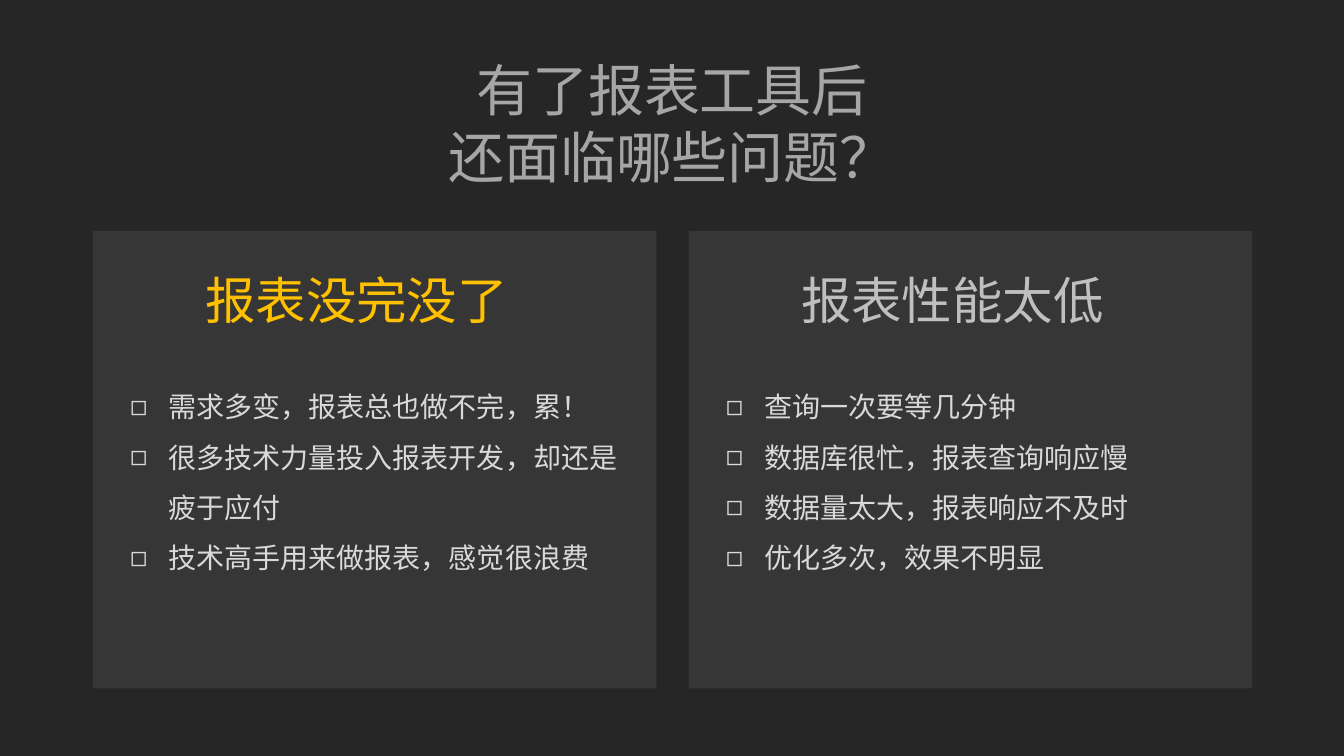
from dataclasses import dataclass

from lxml.etree import SubElement
from pptx import Presentation
from pptx.dml.color import RGBColor
from pptx.enum.shapes import MSO_SHAPE
from pptx.enum.text import MSO_ANCHOR, MSO_AUTO_SIZE, PP_ALIGN
from pptx.oxml.ns import qn
from pptx.util import Inches, Pt


@dataclass(frozen=True)
class Theme:
    background: str = "262626"
    card: str = "363636"
    title: str = "A6A6A6"
    accent: str = "FFC000"
    muted: str = "BFBFBF"
    body: str = "D9D9D9"
    title_size: int = 40
    heading_size: int = 36
    body_size: int = 20
    cjk_font: str = "Noto Sans CJK SC"
    body_font: str = "Arial"


@dataclass(frozen=True)
class Grid:
    left: float = 0.92
    top: float = 2.29
    width: float = 5.59
    height: float = 4.54
    gutter: float = 0.32

    def column(self, number):
        return self.left + number * (self.width + self.gutter)


class ComparisonPage:
    def __init__(self, deck, theme, grid):
        self.theme = theme
        self.grid = grid
        self.page = deck.slides.add_slide(deck.slide_layouts.get_by_name("Comparison"))
        fill = self.page.background.fill
        fill.solid()
        fill.fore_color.rgb = RGBColor.from_string(theme.background)

    def fill_text(self, box, place, lines, size, color, font, wrap=False):
        box.left, box.top, box.width, box.height = map(Inches, place)
        frame = box.text_frame
        frame.text = "\n".join(lines)
        frame.word_wrap = wrap
        frame.auto_size = MSO_AUTO_SIZE.NONE
        frame.vertical_anchor = MSO_ANCHOR.TOP
        for para in frame.paragraphs:
            para.alignment = PP_ALIGN.LEFT if wrap else PP_ALIGN.CENTER
            para.line_spacing = 1.5 if wrap else 1.0
            para.space_before = Pt(0)
            para.font.size = Pt(size)
            para.font.bold = False
            para.font.color.rgb = RGBColor.from_string(color)
            para.font.name = font
            defaults = para._p.pPr.find(qn("a:defRPr"))
            SubElement(defaults, qn("a:ea")).set("typeface", self.theme.cjk_font)
        return frame.paragraphs

    def title(self, lines):
        self.fill_text(self.page.shapes.title, (4.32, 0.5, 4.69, 1.45), lines,
                       self.theme.title_size, self.theme.title, self.theme.cjk_font)

    def card(self, column):
        grid = self.grid
        place = grid.column(column), grid.top, grid.width, grid.height
        panel = self.page.shapes.add_shape(MSO_SHAPE.RECTANGLE, *map(Inches, place))
        panel.shadow.inherit = False
        panel.fill.solid()
        panel.fill.fore_color.rgb = RGBColor.from_string(self.theme.card)
        panel.line.fill.background()
        self.page.shapes._spTree.insert(2, panel._element)

    def heading(self, column, text, color):
        box = self.page.placeholders[1 + 2 * column]
        place = self.grid.column(column) + 1, self.grid.top + 0.33, 3.23, 0.71
        self.fill_text(box, place, [text], self.theme.heading_size, color,
                       self.theme.cjk_font)

    def bullets(self, column, items):
        box = self.page.placeholders[2 + 2 * column]
        height = 0.53 + 0.51 * len(items)
        place = self.grid.column(column) + 0.27, self.grid.top + 1.36, 5.05, height
        for para in self.fill_text(box, place, items, self.theme.body_size,
                                   self.theme.body, self.theme.body_font, wrap=True):
            properties = para._p.pPr
            properties.set("marL", str(Inches(0.38)))
            properties.set("indent", str(-Inches(0.38)))
            bullet = SubElement(properties, qn("a:buChar"))
            bullet.set("char", "◻")
            properties.find(qn("a:defRPr")).addprevious(bullet)


def main():
    theme = Theme()
    deck = Presentation()
    deck.slide_width, deck.slide_height = Inches(13.33), Inches(7.5)
    page = ComparisonPage(deck, theme, Grid())
    page.title(["有了报表工具后", "还面临哪些问题？"])
    problems = [
        ("报表没完没了", theme.accent, [
            "需求多变，报表总也做不完，累！",
            "很多技术力量投入报表开发，却还是疲于应付",
            "技术高手用来做报表，感觉很浪费",
        ]),
        ("报表性能太低", theme.muted, [
            "查询一次要等几分钟",
            "数据库很忙，报表查询响应慢",
            "数据量太大，报表响应不及时",
            "优化多次，效果不明显",
        ]),
    ]
    for column, (heading, color, items) in enumerate(problems):
        page.card(column)
        page.heading(column, heading, color)
        page.bullets(column, items)
    deck.save("out.pptx")


if __name__ == "__main__":
    main()
